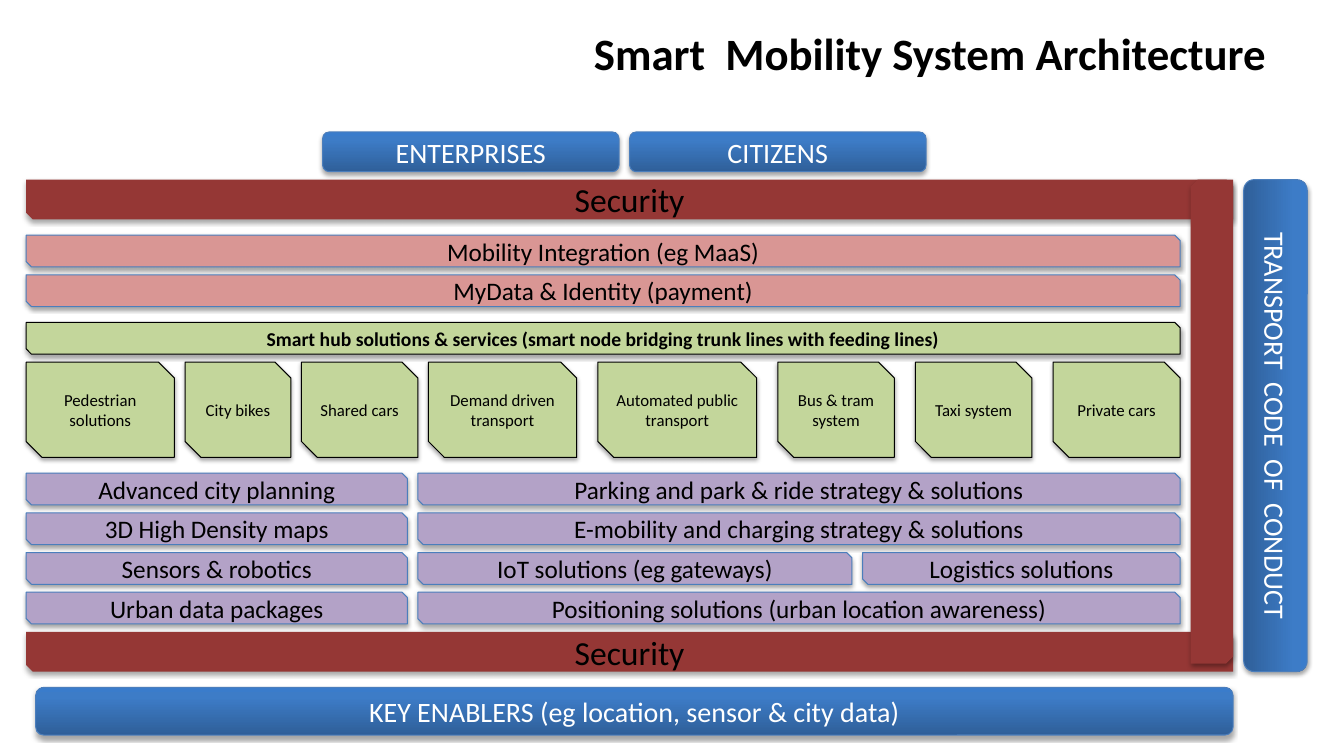
from copy import deepcopy
from dataclasses import dataclass
from typing import Optional

from lxml import etree
from pptx import Presentation
from pptx import util as u
from pptx.dml.color import RGBColor
from pptx.enum import shapes, text
from pptx.oxml import ns

# Grid: 114 columns across the security bars, 70 rows down to the key enablers
LEFT, TOP = 0.26, 1.31
COLUMN, ROW = 11.97 / 114, 5.51 / 70


@dataclass(frozen=True)
class Theme:
    font: str = "Calibri"
    black: str = "000000"
    white: str = "FFFFFF"
    blue_line: str = "4B7EBC"
    blue_stops: tuple = ((0, "2F5F99"), (0.8, "3D7CC7"), (1, "3A7CCB"))
    red: str = "953735"
    pink: str = "D99694"
    green: str = "C3D69B"
    purple: str = "B3A2C7"
    title_size: int = 32
    security_size: int = 24
    frame_size: int = 20
    layer_size: int = 18
    hub_size: int = 14
    service_size: int = 12
    line_width: float = 0.75


THEME = Theme()


@dataclass(frozen=True)
class Style:
    size: int
    fill: Optional[str] = None  # None gives the blue gradient
    line: Optional[str] = None
    color: str = THEME.black
    bold: bool = False
    rounded: bool = False


FRAME = Style(THEME.frame_size, line=THEME.blue_line, color=THEME.white, rounded=True)
SECURITY = Style(THEME.security_size, THEME.red)
INTEGRATION = Style(THEME.layer_size, THEME.pink, THEME.blue_line)
HUB = Style(THEME.hub_size, THEME.green, THEME.black, bold=True)
SERVICE = Style(THEME.service_size, THEME.green, THEME.black)
FOUNDATION = Style(THEME.layer_size, THEME.purple, THEME.blue_line)


@dataclass(frozen=True)
class Block:
    label: str
    column: float
    row: float
    columns: float
    rows: float
    style: Style
    upright: bool = False  # turned a quarter clockwise


# Services: label, first column, columns
SERVICES = [
    ("Pedestrian solutions", 0, 14),
    ("City bikes", 15, 10),
    ("Shared cars", 26, 11),
    ("Demand driven transport", 38, 14),
    ("Automated public transport", 54, 15),
    ("Bus & tram system", 71, 11),
    ("Taxi system", 84, 11),
    ("Private cars", 97, 12),
]

# Foundations: one list per line, each entry label, first column, columns
FOUNDATIONS = [
    [("Advanced city planning", 0, 36),
     ("Parking and park & ride strategy & solutions", 37, 72)],
    [("3D High Density maps", 0, 36),
     ("E-mobility and charging strategy & solutions", 37, 72)],
    [("Sensors & robotics", 0, 36),
     ("IoT solutions (eg gateways)", 37, 41),
     ("Logistics solutions", 79, 30)],
    [("Urban data packages", 0, 36),
     ("Positioning solutions (urban location awareness)", 37, 72)],
]

BLOCKS = [
    # Users and security frame
    Block("ENTERPRISES", 28, 0, 28, 5, FRAME),
    Block("CITIZENS", 57, 0, 28, 5, FRAME),
    Block("Security", 0, 6, 114, 5, SECURITY),
    Block("Security", 0, 63, 114, 5, SECURITY),
    Block("", 110, 6, 4, 61, SECURITY, upright=True),
    # Integration and hub layers
    Block("Mobility Integration (eg MaaS)", 0, 13, 109, 4, INTEGRATION),
    Block("MyData & Identity (payment)", 0, 18, 109, 4, INTEGRATION),
    Block("Smart hub solutions & services (smart node bridging trunk lines "
          "with feeding lines)", 0, 24, 109, 4, HUB),
    # Services and foundations
    *(Block(label, column, 29, columns, 12, SERVICE)
      for label, column, columns in SERVICES),
    *(Block(label, column, 43 + 5 * index, columns, 4, FOUNDATION)
      for index, line in enumerate(FOUNDATIONS)
      for label, column, columns in line),
    # Outer frame
    Block("TRANSPORT  CODE  OF  CONDUCT", 115, 6, 6, 62, FRAME, upright=True),
    Block("KEY ENABLERS (eg location, sensor & city data)", 0.9, 70, 113.1, 6, FRAME),
]


def grid_frame(column: float, row: float, columns: float, rows: float) -> list:
    """Turn grid cells into left, top, width and height."""
    inches = (LEFT + column * COLUMN, TOP + row * ROW, columns * COLUMN, rows * ROW)
    return [u.Inches(length) for length in inches]


def format_text(para, size: int, color: str, bold: bool) -> None:
    para.alignment = text.PP_ALIGN.CENTER
    para.font.name = THEME.font
    para.font.size = u.Pt(size)
    para.font.bold = bold
    para.font.color.rgb = RGBColor.from_string(color)


def fill_gradient(box) -> None:
    box.fill.gradient()
    box.fill.gradient_angle = 90
    stop_list = box._element.spPr.find(".//" + ns.qn("a:gsLst"))
    stop_list.append(deepcopy(stop_list[-1]))
    for stop, (position, color) in zip(box.fill.gradient_stops, THEME.blue_stops):
        stop.position = position
        stop.color.rgb = RGBColor.from_string(color)


def add_shadow(box) -> None:
    box.shadow.inherit = False
    effects = box._element.spPr.find(ns.qn("a:effectLst"))
    shadow = etree.SubElement(effects, ns.qn("a:outerShdw"), blurRad="40000",
                              dist="23000", dir="5400000", rotWithShape="0")
    color = etree.SubElement(shadow, ns.qn("a:srgbClr"), val=THEME.black)
    etree.SubElement(color, ns.qn("a:alpha"), val="35000")


def add_block(page, block: Block) -> None:
    style = block.style
    left, top, width, height = grid_frame(block.column, block.row,
                                          block.columns, block.rows)
    if block.upright:
        left, top = left + (width - height) // 2, top + (height - width) // 2
        width, height = height, width
    kind = (shapes.MSO_SHAPE.ROUNDED_RECTANGLE if style.rounded
            else shapes.MSO_SHAPE.SNIP_2_DIAG_RECTANGLE)
    box = page.shapes.add_shape(kind, left, top, width, height)
    box.rotation = 90 if block.upright else 0
    if style.fill:
        box.fill.solid()
        box.fill.fore_color.rgb = RGBColor.from_string(style.fill)
    else:
        fill_gradient(box)
    if style.line:
        box.line.color.rgb = RGBColor.from_string(style.line)
        box.line.width = u.Pt(THEME.line_width)
    else:
        box.line.fill.background()
    add_shadow(box)
    if block.label:
        box.text_frame.text = block.label
        box.text_frame.word_wrap = True
        box.text_frame.vertical_anchor = text.MSO_ANCHOR.MIDDLE
        format_text(box.text_frame.paragraphs[0], style.size, style.color, style.bold)


def set_title(page, label: str) -> None:
    title = page.shapes.title
    title.left, title.top, title.width, title.height = grid_frame(49, -14, 72.8, 8.1)
    frame = title.text_frame
    frame.text = label
    frame.word_wrap = True
    frame.auto_size = text.MSO_AUTO_SIZE.SHAPE_TO_FIT_TEXT
    frame.vertical_anchor = text.MSO_ANCHOR.TOP
    format_text(frame.paragraphs[0], THEME.title_size, THEME.black, True)


def main() -> None:
    deck = Presentation()
    deck.slide_width, deck.slide_height = u.Inches(13.33), u.Inches(7.5)
    page = deck.slides.add_slide(deck.slide_layouts.get_by_name("Title Only"))
    set_title(page, "Smart  Mobility System Architecture")
    for block in BLOCKS:
        add_block(page, block)
    deck.save("out.pptx")


if __name__ == "__main__":
    main()
